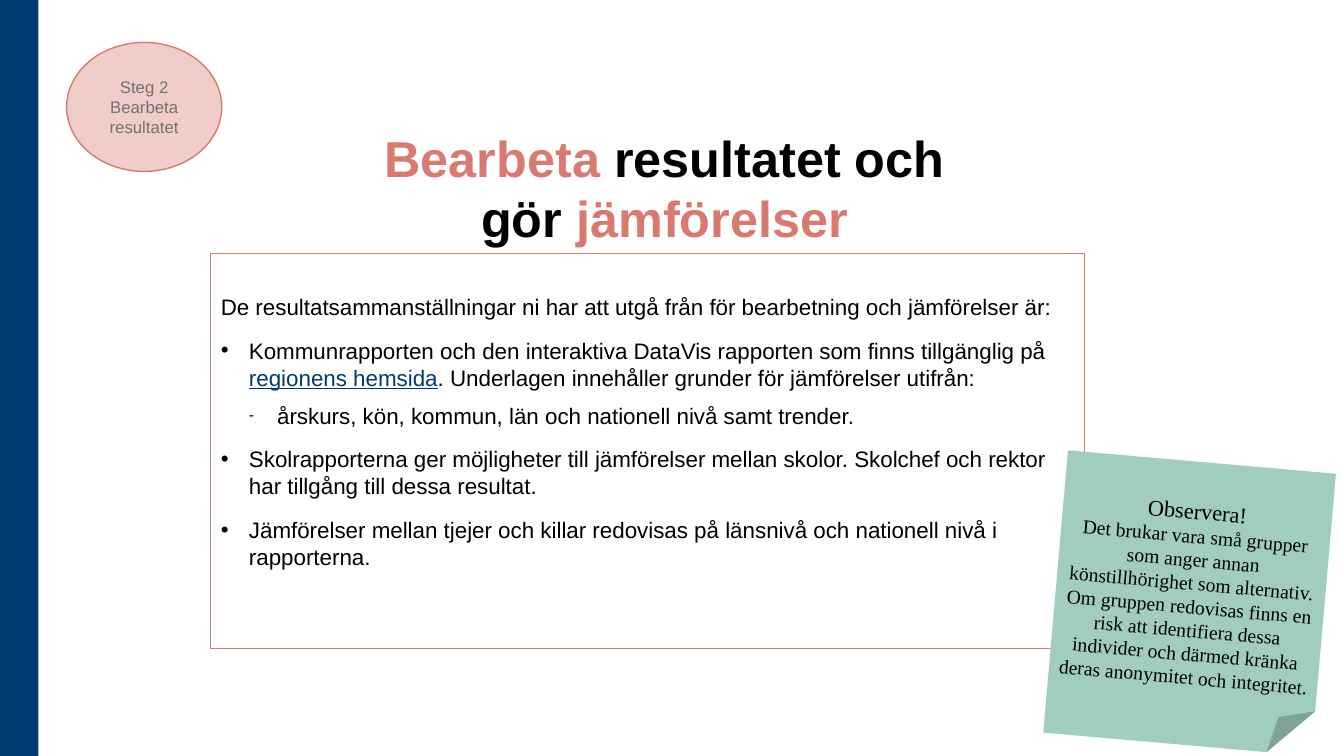
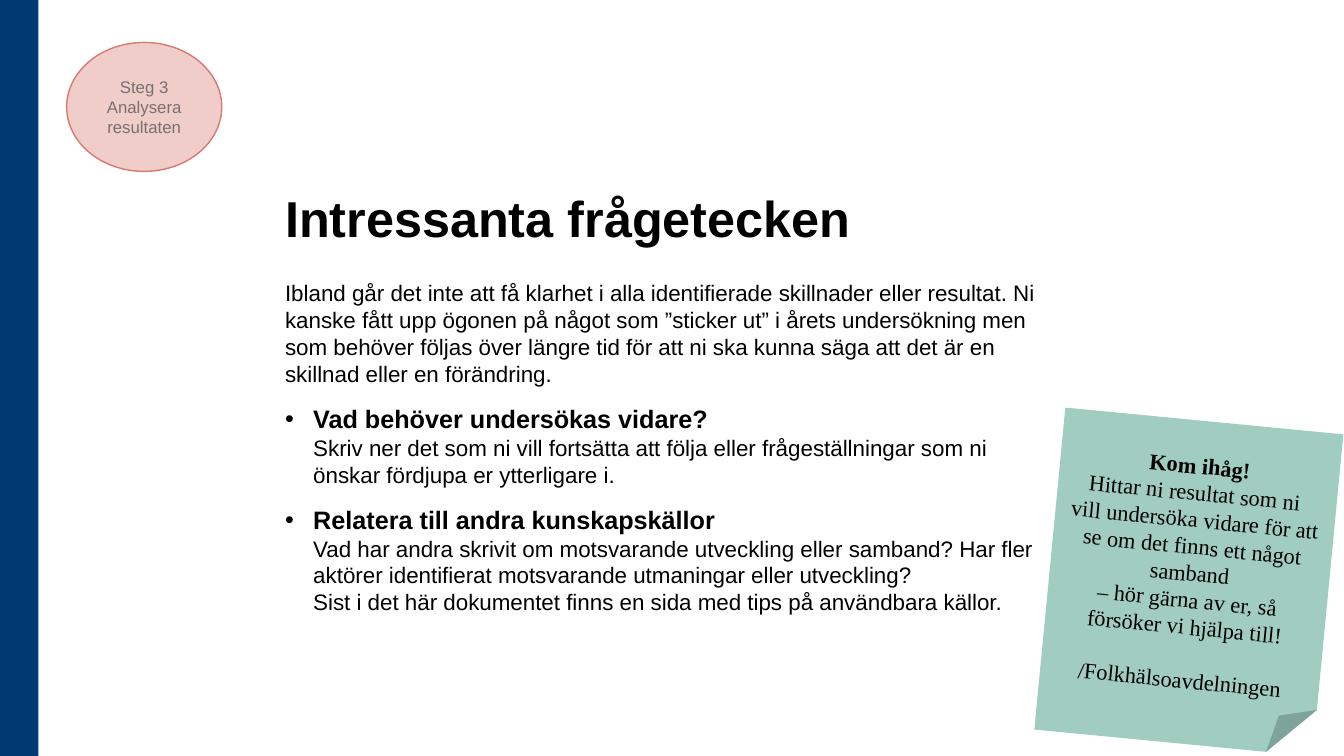
from lxml import etree
from pptx import Presentation
from pptx.dml.color import RGBColor
from pptx.enum.shapes import MSO_SHAPE
from pptx.enum.text import MSO_ANCHOR, MSO_AUTO_SIZE, PP_ALIGN
from pptx.oxml.ns import qn
from pptx.util import Cm, Pt

NAVY = RGBColor(0x00, 0x3A, 0x70)
CORAL = RGBColor(0xD8, 0x7A, 0x6F)
MINT = RGBColor(0xA1, 0xCC, 0xC0)
GRAY = RGBColor(0x76, 0x71, 0x71)
BLACK = RGBColor(0x00, 0x00, 0x00)

LEFT = PP_ALIGN.LEFT
CENTER = PP_ALIGN.CENTER
MIDDLE = MSO_ANCHOR.MIDDLE
BOTTOM = MSO_ANCHOR.BOTTOM
NO_AUTOFIT = MSO_AUTO_SIZE.NONE
RECTANGLE = MSO_SHAPE.RECTANGLE
OVAL = MSO_SHAPE.OVAL
FOLDED_CORNER = MSO_SHAPE.FOLDED_CORNER

SANS = "Arial"
SERIF = "Times New Roman"
TITLE_SIZE = 36
BODY_SIZE = 16
HEADING_SIZE = 18
BADGE_SIZE = 12
INDENT = Cm(0.71)
BADGE_BOX = (Cm(1.68), Cm(1.07), Cm(3.91), Cm(3.25))


def add_text(paragraph, text, size, font=SANS, color=BLACK, bold=False, underline=None):
    for number, line in enumerate(text.split("\n")):
        if number:
            paragraph.add_line_break()
        run = paragraph.add_run()
        run.text = line
        run.font.name = font
        run.font.size = Pt(size)
        run.font.bold = bold
        run.font.underline = underline
        run.font.color.rgb = color


def add_filled_shape(slide, kind, box, color):
    shape = slide.shapes.add_shape(kind, *box)
    shape.shadow.inherit = False
    shape.fill.solid()
    shape.fill.fore_color.rgb = color
    shape.line.fill.background()
    shape.text_frame.word_wrap = True
    shape.text_frame.vertical_anchor = MIDDLE
    return shape


SLIDES = [
    {
        "badge": ["Steg 2", "Bearbeta resultatet"],
        "title_alignment": CENTER,
        "title": [
            ("Bearbeta", CORAL),
            (" resultatet och \ngör ", BLACK),
            ("jämförelser ", CORAL),
        ],
        "body_box": (Cm(5.31), Cm(6.38), Cm(22.02), Cm(9.96)),
        "body_top": Cm(1.01),
        "body_outline": True,
        "body": [
            ("", [("De resultatsammanställningar ni har att utgå från för bearbetning "
                   "och jämförelser är:", {})]),
            ("•", [
                ("Kommunrapporten och den interaktiva DataVis rapporten som finns "
                 "tillgänglig på ", {}),
                ("regionens hemsida", {"color": NAVY, "underline": True}),
                (". Underlagen innehåller grunder för jämförelser utifrån:", {}),
            ]),
            ("-", [("årskurs, kön, kommun, län och nationell nivå samt trender.", {})]),
            ("•", [("Skolrapporterna ger möjligheter till jämförelser mellan skolor. "
                    "Skolchef och rektor har tillgång till dessa resultat.", {})]),
            ("•", [("Jämförelser mellan tjejer och killar redovisas på länsnivå och "
                    "nationell nivå i rapporterna.", {})]),
        ],
        "note_box": (Cm(26.59), Cm(11.63), Cm(6.78), Cm(7.14)),
        "note_rotation": 5,
        "note_top": Cm(0.72),
        "note": [
            ("Observera!", 16, False, 0),
            ("Det brukar vara små grupper som anger annan könstillhörighet som "
             "alternativ. Om gruppen redovisas finns en risk att identifiera dessa "
             "individer och därmed kränka deras anonymitet och integritet.", 14, False, 0),
        ],
    },
    {
        "badge": ["Steg 3", "Analysera resultaten"],
        "title_alignment": LEFT,
        "title": [("Intressanta frågetecken", BLACK)],
        "body_box": (Cm(6.93), Cm(6.91), Cm(19.99), Cm(8.99)),
        "body_top": Cm(0.13),
        "body_outline": False,
        "body": [
            ("", [("Ibland går det inte att få klarhet i alla identifierade skillnader "
                   "eller resultat. Ni kanske fått upp ögonen på något som ”sticker ut” "
                   "i årets undersökning men som behöver följas över längre tid för att "
                   "ni ska kunna säga att det är en skillnad eller en förändring.", {})]),
            ("•", [
                ("Vad behöver undersökas vidare?\n", {"size": HEADING_SIZE, "bold": True}),
                ("Skriv ner det som ni vill fortsätta att följa eller frågeställningar "
                 "som ni önskar fördjupa er ytterligare i.", {}),
            ]),
            ("•", [
                ("Relatera till andra kunskapskällor\n", {"size": HEADING_SIZE, "bold": True}),
                ("Vad har andra skrivit om motsvarande utveckling eller samband? Har "
                 "fler aktörer identifierat motsvarande utmaningar eller utveckling?\n"
                 "Sist i det här dokumentet finns en sida med tips på användbara källor.", {}),
            ]),
        ],
        "note_box": (Cm(26.44), Cm(10.59), Cm(7.04), Cm(8.15)),
        "note_rotation": 5.5,
        "note_top": Cm(0.8),
        "note": [
            ("Kom ihåg!", 16, True, 0),
            ("Hittar ni resultat som ni ", 16, False, 0),
            ("vill undersöka vidare för att se om det finns ett något samband", 16, False, 0),
            ("– hör gärna av er, så försöker vi hjälpa till!", 16, False, 0),
            ("/Folkhälsoavdelningen", 16, False, 19),
        ],
    },
]

presentation = Presentation()
presentation.slide_width = Cm(33.87)
presentation.slide_height = Cm(19.05)
master = presentation.slide_master
layout = presentation.slide_layouts[1]

for style_name, size in (("p:titleStyle", TITLE_SIZE), ("p:bodyStyle", BODY_SIZE)):
    style = master.element.find(".//" + qn(style_name))
    for properties in style.iter(qn("a:defRPr")):
        properties.set("sz", str(size * 100))
        properties.find(qn("a:latin")).set("typeface", SANS)

layout_title = layout.placeholders[0]
layout_title.left, layout_title.top = Cm(6.93), Cm(2.69)
layout_title.width, layout_title.height = Cm(19.99), Cm(3.68)
layout_title.text_frame.vertical_anchor = BOTTOM
layout_title.text_frame.auto_size = NO_AUTOFIT

for number, content in enumerate(SLIDES):
    slide = presentation.slides.add_slide(layout)

    if number == 0:
        band_box = (0, 0, Cm(0.97), presentation.slide_height)
        band = add_filled_shape(slide, RECTANGLE, band_box, NAVY)
        master.shapes.element.insert(2, band.element)

    title = slide.shapes.title
    paragraph = title.text_frame.paragraphs[0]
    paragraph.alignment = content["title_alignment"]
    for text, color in content["title"]:
        add_text(paragraph, text, TITLE_SIZE, color=color, bold=True)

    body = slide.placeholders[1]
    body.left, body.top, body.width, body.height = content["body_box"]
    if content["body_outline"]:
        body.line.color.rgb = CORAL
        body.line.width = Pt(0.75)
    frame = body.text_frame
    frame.auto_size = NO_AUTOFIT
    frame.margin_top = content["body_top"]
    for index, (bullet, runs) in enumerate(content["body"]):
        paragraph = frame.add_paragraph() if index else frame.paragraphs[0]
        paragraph.level = 1 if bullet == "-" else 0
        properties = paragraph._p.get_or_add_pPr()
        if bullet:
            properties.set("marL", str(INDENT * (paragraph.level + 1)))
            properties.set("indent", str(-INDENT))
            if bullet == "-":
                etree.SubElement(properties, qn("a:buSzPct"), val="70000")
            etree.SubElement(properties, qn("a:buFont"), typeface=SANS)
            etree.SubElement(properties, qn("a:buChar"), char=bullet)
        else:
            properties.set("marL", "0")
            properties.set("indent", "0")
            etree.SubElement(properties, qn("a:buNone"))
        paragraph.space_before = Pt((8 if bullet == "-" else 12) if index else 0)
        for text, style in runs:
            add_text(paragraph, text, **{"size": BODY_SIZE, **style})

    note = add_filled_shape(slide, FOLDED_CORNER, content["note_box"], MINT)
    note.rotation = content["note_rotation"]
    frame = note.text_frame
    frame.margin_top = content["note_top"]
    for index, (text, size, bold, space) in enumerate(content["note"]):
        paragraph = frame.add_paragraph() if index else frame.paragraphs[0]
        paragraph.alignment = CENTER
        paragraph.space_before = Pt(space)
        add_text(paragraph, text, size, font=SERIF, bold=bold)

    badge = add_filled_shape(slide, OVAL, BADGE_BOX, CORAL)
    badge.line.color.rgb = CORAL
    badge.line.width = Pt(1)
    fill_color = badge.element.spPr.find(qn("a:solidFill") + "/" + qn("a:srgbClr"))
    etree.SubElement(fill_color, qn("a:alpha"), val="37000")
    frame = badge.text_frame
    for index, text in enumerate(content["badge"]):
        paragraph = frame.add_paragraph() if index else frame.paragraphs[0]
        paragraph.alignment = CENTER
        add_text(paragraph, text, BADGE_SIZE, color=GRAY)

presentation.save("out.pptx")
